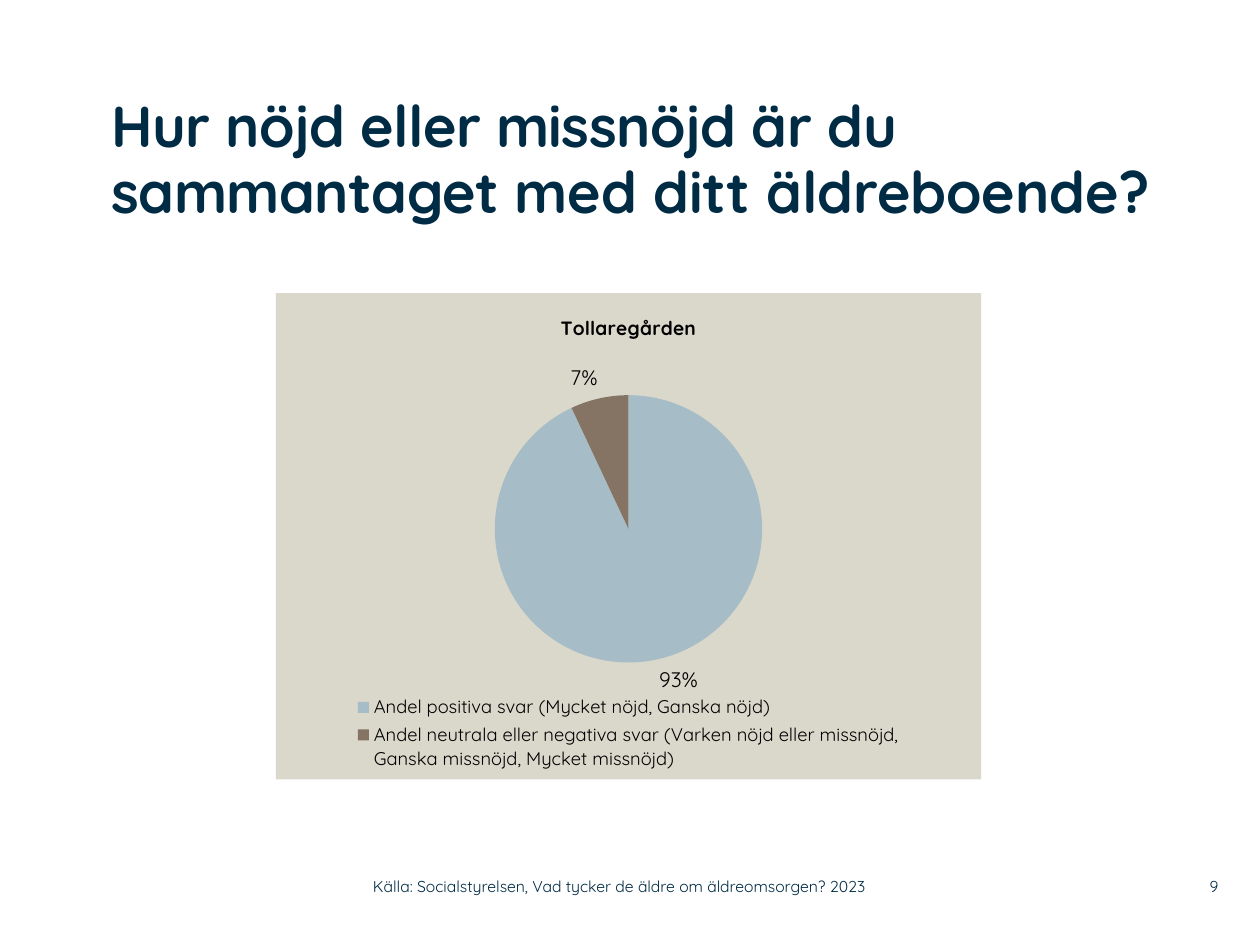
import pptx
import pptx.chart.data
import pptx.dml.color
import pptx.enum.chart
import pptx.enum.text
import pptx.oxml
import pptx.oxml.ns
import pptx.util
from pptx.util import Cm

FONT = "Quicksand"
NAVY = "002B45"
BLACK = "000000"
PANEL = "DAD7CB"
ALIGN = pptx.enum.text.PP_ALIGN
ANCHOR = pptx.enum.text.MSO_ANCHOR

TEXTS = [
    {"at": (2.24, 1.9, 22.43, 3.6), "size": 33, "bold": True, "align": ALIGN.LEFT,
     "anchor": ANCHOR.TOP, "line": 0.96,
     "runs": [("Hur nöjd eller missnöjd är du sammantaget ", -30),
              ("med ditt äldreboende?", 0)]},
    {"at": (7.52, 17.5, 11.25, 0.74), "size": 9, "bold": False, "align": ALIGN.LEFT,
     "anchor": ANCHOR.MIDDLE, "line": 1.0,
     "runs": [("Källa: Socialstyrelsen, Vad tycker de äldre om äldreomsorgen? 2023", 0)]},
    {"at": (23.37, 17.5, 1.19, 0.74), "size": 9, "bold": False, "align": ALIGN.RIGHT,
     "anchor": ANCHOR.MIDDLE, "line": 1.0, "runs": [("9", 0)]},
]

CHART_AT = (5.56, 5.91, 14.22, 9.8)
CHART_TITLE = "Tollaregården"
SLICES = [
    ("Andel positiva svar (Mycket nöjd, Ganska nöjd)", 93, "A6BCC6"),
    ("Andel neutrala eller negativa svar (Varken nöjd eller missnöjd, "
     "Ganska missnöjd, Mycket missnöjd)", 7, "857363"),
]
PIE_LAYOUT = (0.31, 0.21, 0.38, 0.55)
LEGEND_LAYOUT = (0.11, 0.82, 0.78, 0.17)


def color(value):
    return pptx.dml.color.RGBColor.from_string(value)


def set_font(font, size, value, bold=False):
    font.name = FONT
    font.size = pptx.util.Pt(size)
    font.bold = bold
    font.color.rgb = color(value)


def add_text(page, item):
    box = page.shapes.add_textbox(*map(Cm, item["at"]))
    frame = box.text_frame
    frame.word_wrap = True
    frame.vertical_anchor = item["anchor"]
    frame.margin_left = frame.margin_right = frame.margin_top = frame.margin_bottom = 0
    para = frame.paragraphs[0]
    para.alignment = item["align"]
    para.line_spacing = item["line"]
    for text, spacing in item["runs"]:
        span = para.add_run()
        span.text = text
        set_font(span.font, item["size"], NAVY, item["bold"])
        if spacing:
            span.font._element.set("spc", str(spacing))


def manual_layout(place, inner=False):
    target = '<c:layoutTarget val="inner"/>' if inner else ""
    modes = '<c:xMode val="edge"/><c:yMode val="edge"/>'
    sides = "".join(f'<c:{side} val="{value}"/>' for side, value in zip("xywh", place))
    return pptx.oxml.parse_xml(
        f'<c:layout {pptx.oxml.ns.nsdecls("c")}><c:manualLayout>'
        f"{target}{modes}{sides}</c:manualLayout></c:layout>")


def set_layout(parent, layout, index):
    for old in parent.findall(pptx.oxml.ns.qn("c:layout")):
        parent.remove(old)
    parent.insert(index, layout)


def add_pie(page):
    data = pptx.chart.data.CategoryChartData()
    data.categories = [name for name, value, fill in SLICES]
    data.add_series(CHART_TITLE, [value for name, value, fill in SLICES])
    chart = page.shapes.add_chart(
        pptx.enum.chart.XL_CHART_TYPE.PIE, *map(Cm, CHART_AT), data).chart
    set_font(chart.font, 18, BLACK)

    chart.has_title = True
    span = chart.chart_title.text_frame.paragraphs[0].add_run()
    span.text = CHART_TITLE
    set_font(span.font, 11, BLACK, True)
    chart.chart_title.include_in_layout = False

    chart.has_legend = True
    chart.legend.position = pptx.enum.chart.XL_LEGEND_POSITION.BOTTOM
    chart.legend.include_in_layout = False
    set_font(chart.legend.font, 10.5, BLACK)

    plot = chart.plots[0]
    plot.vary_by_categories = True
    series = plot.series[0]
    for index, (name, value, fill) in enumerate(SLICES):
        point = series.points[index].format
        point.fill.solid()
        point.fill.fore_color.rgb = color(fill)
        point.line.fill.background()
    labels = series.data_labels
    labels.show_percentage = True
    labels.show_value = False
    labels.number_format = "0%"
    labels.number_format_is_linked = False
    labels.position = pptx.enum.chart.XL_LABEL_POSITION.OUTSIDE_END
    set_font(labels.font, 12, BLACK)

    space = chart._chartSpace
    area = space.chart.plotArea
    set_layout(area, manual_layout(PIE_LAYOUT, True), 0)
    set_layout(chart.legend._element, manual_layout(LEGEND_LAYOUT), 1)
    space.chart.addnext(pptx.oxml.parse_xml(
        f'<c:spPr {pptx.oxml.ns.nsdecls("c", "a")}><a:solidFill><a:srgbClr val="{PANEL}"/>'
        "</a:solidFill><a:ln><a:noFill/></a:ln></c:spPr>"))


def main():
    deck = pptx.Presentation()
    deck.slide_width, deck.slide_height = Cm(25.4), Cm(19.05)
    page = deck.slides.add_slide(deck.slide_layouts[6])
    for item in TEXTS:
        add_text(page, item)
    add_pie(page)
    deck.save("out.pptx")


if __name__ == "__main__":
    main()
